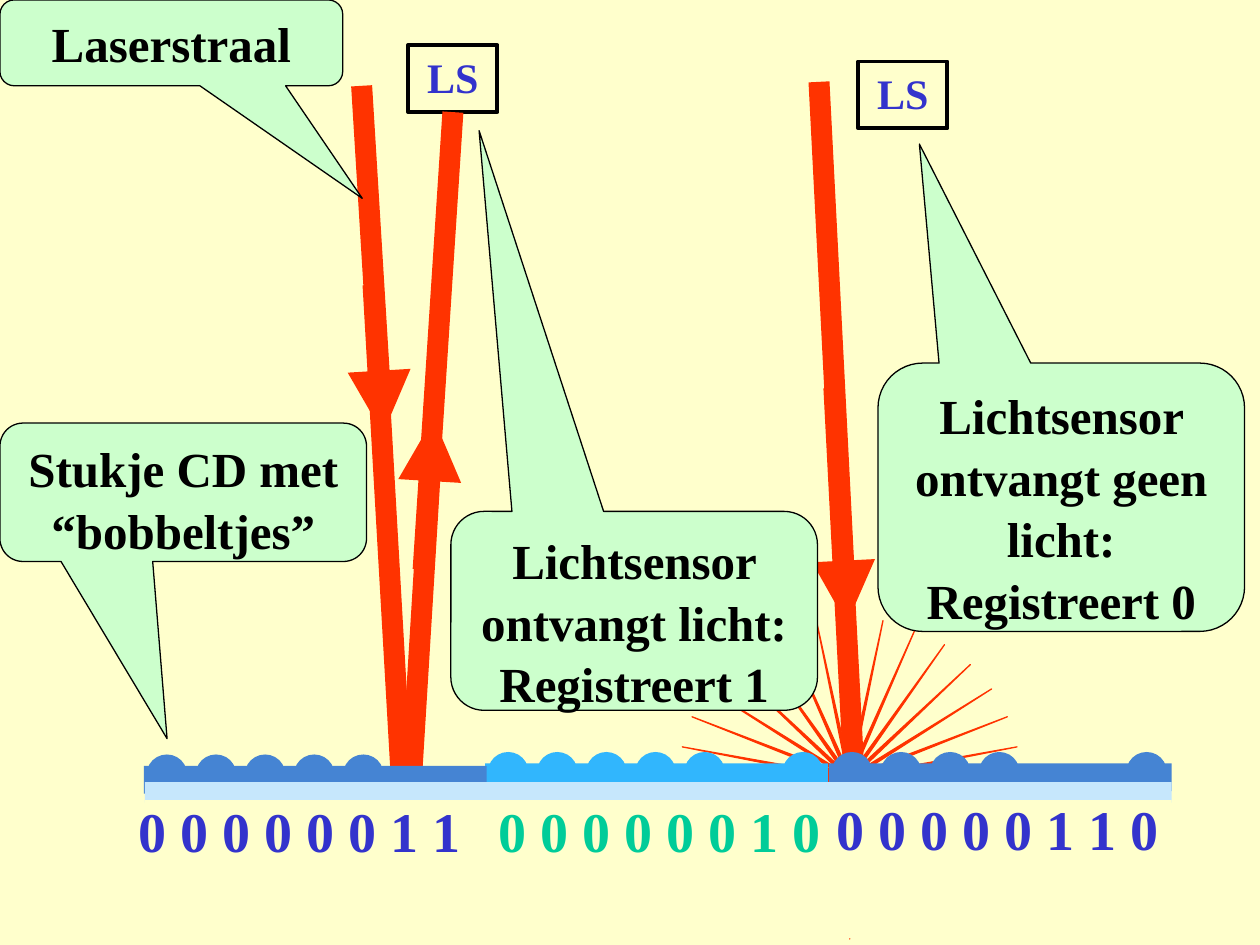
from dataclasses import dataclass

from lxml import etree
from pptx import Presentation
from pptx.dml.color import RGBColor
from pptx.enum.shapes import MSO_CONNECTOR, MSO_SHAPE
from pptx.enum.text import MSO_ANCHOR, PP_ALIGN
from pptx.oxml.ns import qn
from pptx.util import Cm, Pt

RECT, OVAL = MSO_SHAPE.RECTANGLE, MSO_SHAPE.OVAL
STAR, CALLOUT = MSO_SHAPE.STAR_32_POINT, MSO_SHAPE.ROUNDED_RECTANGULAR_CALLOUT
STRAIGHT = MSO_CONNECTOR.STRAIGHT
LEFT, CENTER = PP_ALIGN.LEFT, PP_ALIGN.CENTER
TOP = MSO_ANCHOR.TOP
BOTTOM_SIDE = 2


@dataclass(frozen=True)
class Theme:
    font: str = "Times New Roman"
    paper: str = "FFFFCC"
    ink: str = "000000"
    laser: str = "FF3300"
    callout: str = "CCFFCC"
    disc: str = "4584D3"
    disc_light: str = "31B6FD"
    base: str = "C6E7FC"
    blue: str = "3333CC"
    green: str = "00CC99"
    sensor_size: int = 24
    callout_size: int = 28
    digit_size: int = 32
    thin: float = 0.75
    frame: float = 2.25
    beam: int = 12


class Board:
    """Theme plus the slide being drawn; all lengths in cm."""

    def __init__(self, slide, theme):
        self.s, self.t = slide, theme
        fill = slide.background.fill
        fill.solid()
        fill.fore_color.rgb = RGBColor.from_string(theme.paper)

    def text(self, sp, lines, size, color, align=CENTER, spacing=1.0):
        tf = sp.text_frame
        for name, value in {"word_wrap": True, "vertical_anchor": TOP}.items():
            setattr(tf, name, value)
        for i, line in enumerate(lines):
            p = tf.paragraphs[0] if i == 0 else tf.add_paragraph()
            p.alignment, p.line_spacing = align, spacing
            r = p.add_run()
            r.text = line
            style = {"name": self.t.font, "size": Pt(size), "bold": True}
            for name, value in style.items():
                setattr(r.font, name, value)
            r.font.color.rgb = RGBColor.from_string(color)

    def shape(self, kind, box, fill=None, line=None, width=0, adj=()):
        sp = self.s.shapes.add_shape(kind, *map(Cm, box))
        sp.shadow.inherit = False
        if fill:
            sp.fill.solid()
            sp.fill.fore_color.rgb = RGBColor.from_string(fill)
        else:
            sp.fill.background()
        if line:
            sp.line.color.rgb = RGBColor.from_string(line)
            sp.line.width = Pt(width)
        else:
            sp.line.fill.background()
        for i, value in enumerate(adj):
            sp.adjustments[i] = value
        return sp

    def beam(self, start, end, arrow=False, target=None):
        c = self.s.shapes.add_connector(STRAIGHT, *map(Cm, start + end))
        if target is not None:
            c.end_connect(target, BOTTOM_SIDE)
        c.line.color.rgb = RGBColor.from_string(self.t.laser)
        c.line.width = Pt(self.t.beam)
        if arrow:
            etree.SubElement(c.line._get_or_add_ln(), qn("a:tailEnd"), type="triangle")
        etree.SubElement(c._element.spPr, qn("a:effectLst"))

    def sensor(self, x, y, fill=None):
        sp = self.shape(RECT, (x, y, 1.8, 1.35), fill, self.t.ink, self.t.frame)
        self.text(sp, ["LS"], self.t.sensor_size, self.t.blue)
        return sp

    def callout(self, box, tip, lines):
        sp = self.shape(CALLOUT, box, self.t.callout, self.t.ink, self.t.thin, (*tip, 0.167))
        self.text(sp, lines, self.t.callout_size, self.t.ink, spacing=1.05)

    def track(self, x, y, color, slots):
        self.shape(RECT, (x, y, 6.91, 0.56), color)
        for slot in slots:
            self.shape(OVAL, (x + 0.06 + slot * 0.99, y - 0.23, 0.81, 0.79), color)

    def digits(self, box, bits, color):
        sp = self.s.shapes.add_textbox(*map(Cm, box))
        self.text(sp, [" ".join(bits)], self.t.digit_size, color, LEFT)


def main():
    prs = Presentation()
    prs.slide_width, prs.slide_height = Cm(25.4), Cm(19.05)
    t = Theme()
    b = Board(prs.slides.add_slide(prs.slide_layouts[6]), t)

    # Scattered light
    b.shape(STAR, (13.69, 12.45, 6.88, 6.48), t.laser, t.laser, t.thin, (0.045,))

    # Reflected beam, going down and back up into the sensor
    sensor = b.sensor(8.23, 0.91, t.paper)
    b.beam((8.31, 15.44), (8.74, 8.43), arrow=True)
    b.beam((8.53, 11.48), (9.13, 2.26), target=sensor)
    b.beam((7.29, 1.73), (7.72, 8.74), arrow=True)
    b.beam((7.52, 5.74), (8.08, 15.52))

    # Beam that hits a bump
    b.beam((16.51, 1.65), (17.07, 12.57), arrow=True)
    b.beam((16.81, 7.82), (17.2, 15.32))
    b.sensor(17.3, 1.24)

    # Sensor callouts
    b.callout((9.09, 10.31, 7.39, 4.01), (-0.423, -2.414),
              ["Lichtsensor ontvangt licht:", "Registreert 1"])
    b.callout((17.7, 7.32, 7.39, 5.41), (-0.387, -1.316),
              ["Lichtsensor ontvangt geen licht:", "Registreert 0"])

    # Disc: three stretches of track with bumps, on a base
    b.track(16.71, 15.39, t.disc, (0, 1, 2, 3, 6))
    b.track(9.78, 15.39, t.disc_light, (0, 1, 2, 3, 4, 6))
    b.track(2.9, 15.44, t.disc, (0, 1, 2, 3, 4))
    b.shape(RECT, (2.92, 15.77, 20.7, 0.41), t.base)
    b.shape(RECT, (2.92, 16.13, 20.7, 2.79), t.paper)

    # Bits read from each stretch
    b.digits((2.54, 15.93, 7.39, 1.6), "00000011", t.blue)
    b.digits((9.8, 15.93, 7.11, 1.6), "00000010", t.green)
    b.digits((16.61, 15.9, 7.21, 1.6), "00000110", t.blue)

    # Callouts for the disc and the laser
    b.callout((0, 8.53, 7.39, 2.79), (-0.044, 1.78), ["Stukje CD met “bobbeltjes”"])
    b.callout((0, 0, 6.91, 1.73), (0.557, 1.812), ["Laserstraal"])

    prs.save("out.pptx")


if __name__ == "__main__":
    main()
